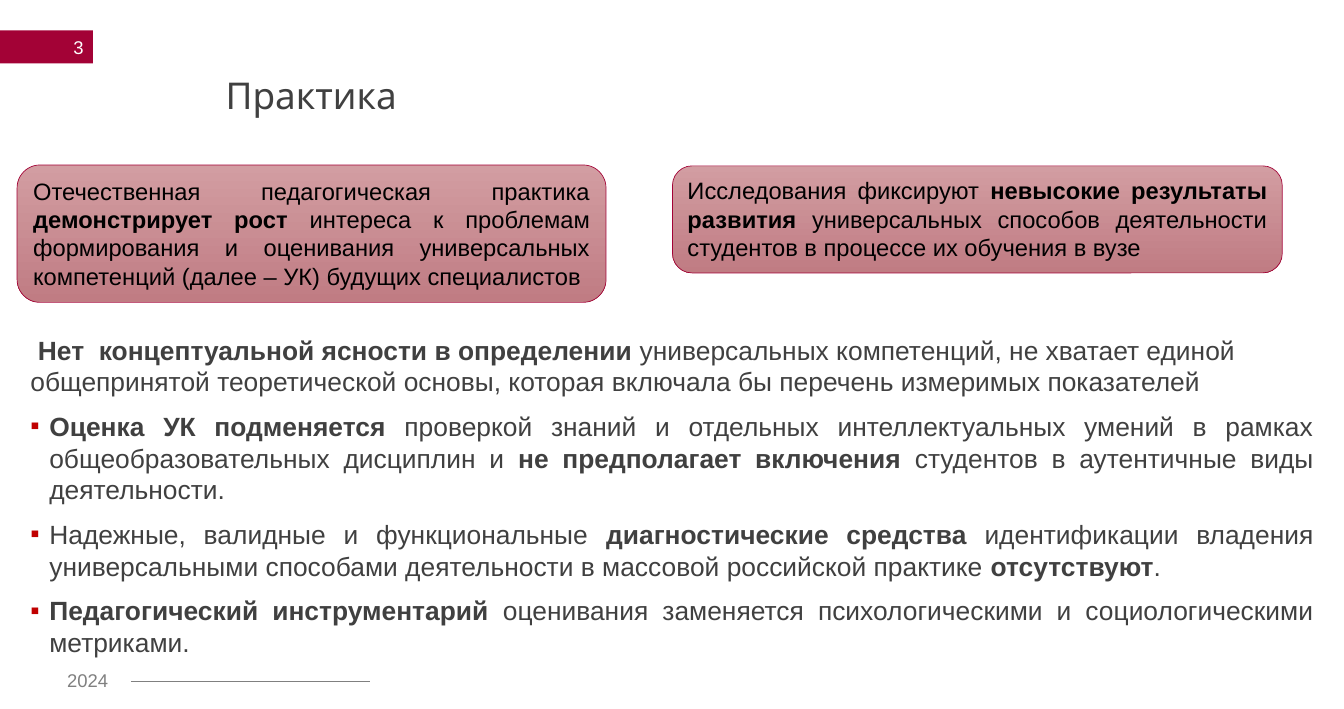
from pptx import Presentation
from pptx.dml.color import RGBColor
from pptx.enum.shapes import MSO_CONNECTOR, MSO_SHAPE
from pptx.enum.text import MSO_ANCHOR, MSO_AUTO_SIZE, PP_ALIGN
from pptx.oxml.ns import qn
from pptx.util import Inches, Pt
from lxml.etree import SubElement

SUMMARY = (
    "**Нет  концептуальной ясности в определении **универсальных компетенций, "
    "не хватает единой общепринятой теоретической основы, которая включала бы "
    "перечень измеримых показателей"
)
PROBLEMS = [
    "**Оценка УК подменяется** проверкой знаний и отдельных интеллектуальных умений "
    "в рамках общеобразовательных дисциплин и **не предполагает включения **студентов "
    "в аутентичные виды деятельности.",
    "Надежные, валидные и функциональные **диагностические средства **идентификации "
    "владения универсальными способами деятельности в массовой российской практике "
    "**отсутствуют**.",
    "**Педагогический инструментарий **оценивания заменяется психологическими и "
    "социологическими метриками.",
]
FINDINGS = [
    (0.18, 1.74, 6.21, 1.45, 0.167,
     "Отечественная педагогическая практика **демонстрирует рост **интереса к проблемам "
     "формирования и оценивания универсальных компетенций (далее – УК) будущих "
     "специалистов"),
    (7.09, 1.75, 6.43, 1.13, 0.183,
     "Исследования фиксируют **невысокие результаты развития** универсальных способов "
     "деятельности студентов в процессе их обучения в вузе"),
]


def color(value):
    """Turn a hex string into a colour."""
    return RGBColor.from_string(value)


class PracticeSlide:
    """Hold the style and the slide being built."""

    font = "Arial"
    title_font = "Cabin"
    accent = "A30236"
    text = "404040"
    muted = "808080"
    bullet = "C00000"
    card_top = "D29DA2"
    card_bottom = "C07C83"

    def __init__(self, presentation):
        """Add a slide with a title and a body."""
        self.slide = presentation.slides.add_slide(presentation.slide_layouts[1])

    def place(self, shape, left, top, width, height):
        """Set the position and size of a shape."""
        shape.left, shape.top = Inches(left), Inches(top)
        shape.width, shape.height = Inches(width), Inches(height)

    def frame(self, shape, anchor=MSO_ANCHOR.TOP):
        """Prepare the text frame of a shape."""
        frame = shape.text_frame
        frame.word_wrap = True
        frame.auto_size = MSO_AUTO_SIZE.NONE
        frame.vertical_anchor = anchor
        return frame

    def add_text(self, paragraph, content, size, fill, align=PP_ALIGN.LEFT, name=None):
        """Add text in which double asterisks switch bold on and off."""
        paragraph.alignment = align
        paragraph.font.name = name or self.font
        paragraph.font.size = Pt(size)
        paragraph.font.color.rgb = color(fill)
        for index, part in enumerate(content.split("**")):
            if part:
                run = paragraph.add_run()
                run.text = part
                if index % 2:
                    run.font.bold = True

    def title(self, content, *box):
        """Fill the title placeholder."""
        shape = self.slide.shapes.title
        self.place(shape, *box)
        paragraph = self.frame(shape).paragraphs[0]
        self.add_text(paragraph, content, 28, self.text, name=self.title_font)

    def body(self, summary, items, *box):
        """Fill the body placeholder with a summary and a bulleted list."""
        shape = self.slide.placeholders[1]
        self.place(shape, *box)
        frame = self.frame(shape)
        paragraph = frame.paragraphs[0]
        self.indent(paragraph, 0, 0.08)
        SubElement(paragraph._p.get_or_add_pPr(), qn("a:buNone"))
        paragraph.space_before = Pt(0)
        self.add_text(paragraph, summary, 20, self.text)
        for item in items:
            paragraph = frame.add_paragraph()
            self.indent(paragraph, 0.2, -0.2)
            self.add_bullet(paragraph)
            paragraph.space_before = Pt(10)
            self.add_text(paragraph, item, 20, self.text, PP_ALIGN.JUSTIFY)

    def indent(self, paragraph, margin, first):
        """Set the left margin and first-line indent of a paragraph."""
        properties = paragraph._p.get_or_add_pPr()
        properties.set("marL", str(Inches(margin)))
        properties.set("indent", str(Inches(first)))

    def add_bullet(self, paragraph):
        """Give a paragraph a small square bullet."""
        properties = paragraph._p.get_or_add_pPr()
        bullet_color = SubElement(properties, qn("a:buClr"))
        SubElement(bullet_color, qn("a:srgbClr"), val=self.bullet)
        SubElement(properties, qn("a:buFont"), typeface=self.font)
        SubElement(properties, qn("a:buChar"), char="▪")

    def card(self, left, top, width, height, rounding, content):
        """Add a rounded gradient card with justified text."""
        shape = self.slide.shapes.add_shape(
            MSO_SHAPE.ROUNDED_RECTANGLE,
            Inches(left), Inches(top), Inches(width), Inches(height))
        shape.adjustments[0] = rounding
        shape.shadow.inherit = False
        shape.fill.gradient()
        shape.fill.gradient_angle = 270
        for stop, value in zip(shape.fill.gradient_stops, (self.card_top, self.card_bottom)):
            stop.color.rgb = color(value)
        shape.line.color.rgb = color(self.accent)
        shape.line.width = Pt(0.5)
        paragraph = self.frame(shape).paragraphs[0]
        self.add_text(paragraph, content, 18, "000000", PP_ALIGN.JUSTIFY)

    def page_number(self, content, *box):
        """Add the page number on its accent band."""
        shape = self.slide.shapes.add_shape(MSO_SHAPE.RECTANGLE, *map(Inches, box))
        shape.shadow.inherit = False
        shape.fill.solid()
        shape.fill.fore_color.rgb = color(self.accent)
        shape.line.fill.background()
        paragraph = self.frame(shape, MSO_ANCHOR.MIDDLE).paragraphs[0]
        self.add_text(paragraph, content, 14, "FFFFFF", PP_ALIGN.RIGHT)

    def label(self, content, *box):
        """Add a small muted label."""
        shape = self.slide.shapes.add_textbox(*map(Inches, box))
        self.add_text(self.frame(shape).paragraphs[0], content, 14, self.muted)

    def rule(self, left, right, top):
        """Add a horizontal muted line."""
        line = self.slide.shapes.add_connector(
            MSO_CONNECTOR.STRAIGHT, Inches(left), Inches(top), Inches(right), Inches(top))
        line.line.color.rgb = color(self.muted)
        line.line.width = Pt(1.5)
        SubElement(line._element.spPr, qn("a:effectLst"))


def main():
    """Build and save the presentation."""
    presentation = Presentation()
    presentation.slide_width = Inches(14.17)
    presentation.slide_height = Inches(7.48)
    practice = PracticeSlide(presentation)
    practice.page_number("3", 0, 0.32, 0.98, 0.35)
    practice.label("2024", 0.61, 7.01, 0.67, 0.34)
    practice.rule(1.38, 3.9, 7.19)
    practice.title("Практика", 2.28, 0.72, 11.65, 1.03)
    for finding in FINDINGS:
        practice.card(*finding)
    practice.body(SUMMARY, PROBLEMS, 0.22, 3.47, 13.73, 3.64)
    presentation.save("out.pptx")


if __name__ == "__main__":
    main()
